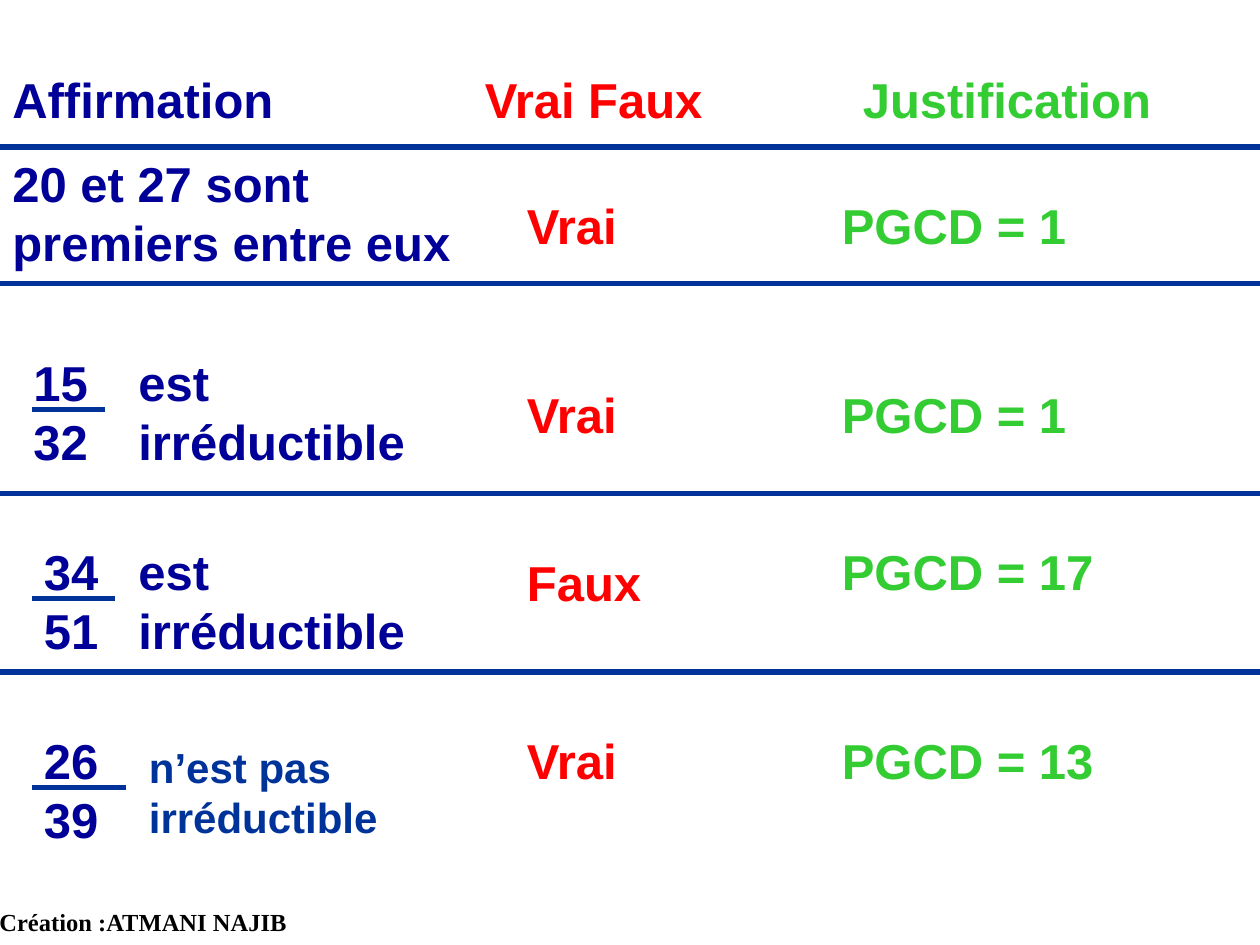
from lxml import etree
from pptx import Presentation
from pptx.dml.color import RGBColor
from pptx.enum.shapes import MSO_CONNECTOR
from pptx.enum.text import MSO_AUTO_SIZE, PP_ALIGN
from pptx.oxml.ns import qn
from pptx.util import Inches, Pt

LINE = MSO_CONNECTOR.STRAIGHT
FIT = MSO_AUTO_SIZE.SHAPE_TO_FIT_TEXT
LEFT, RIGHT = PP_ALIGN.LEFT, PP_ALIGN.RIGHT
COLS, ROWS = 120, 90
NAVY, BLUE, RED, GREEN = "000099", "003399", "FF0000", "33CC33"
ONE, TWO = 6.8, 12.4
MARK, PROOF = 49, 79


def unit(n):
    """Turn grid steps, twelve to the inch, into a length."""
    return Inches(n / 12)


def paint(code):
    """Return the colour for a hex string."""
    return RGBColor.from_string(code)


def text(host, words, box, color=NAVY, size=28, face="Arial",
         wrap=False, align=LEFT):
    """Place bold text, one paragraph per line, in a grid box."""
    frame = host.add_textbox(*map(unit, box)).text_frame
    frame.text = words
    frame.word_wrap = wrap
    frame.auto_size = FIT
    for para in frame.paragraphs:
        para.alignment = align
        font = para.runs[0].font
        font.name, font.size, font.bold = face, Pt(size), True
        font.color.rgb = paint(color)


def rule(host, start, end, y):
    """Draw a level blue line between two columns."""
    line = host.add_connector(LINE, unit(start), unit(y), unit(end), unit(y))
    line.line.color.rgb = paint(BLUE)
    line.line.width = Pt(3)
    etree.SubElement(line._element.spPr, qn("a:effectLst"))


def header(host, top):
    """Write the three column titles."""
    titles = [("Affirmation", 0, 27.4, NAVY), ("Vrai Faux", 45, 23.4, RED),
              ("Justification", 81, 30, GREEN)]
    for words, left, wide, color in titles:
        text(host, words, (left, top, wide, ONE), color=color)


def answer(host, top, mark, proof, drop=0):
    """Write the verdict, lowered by drop, and its proof."""
    wide = 11.3 if mark == "Vrai" else 13.3
    text(host, mark, (MARK, top + drop, wide, ONE), color=RED)
    wide = 23.8 if proof.endswith("= 1") else 26.4
    text(host, proof, (PROOF, top, wide, ONE), color=GREEN)


def claim(host, top, ratio, left, wide, end, words, box, **form):
    """Group a fraction, its bar and the words that follow."""
    group = host.add_group_shape().shapes
    text(group, ratio, (left, top, wide, TWO), wrap=True)
    x, drop, span, high = box
    text(group, words, (x, top + drop, span, high), wrap=True, **form)
    rule(group, 3, end, top + 6)


def build():
    """Build the slide and save it."""
    deck = Presentation()
    deck.slide_width, deck.slide_height = unit(COLS), unit(ROWS)
    host = deck.slides.add_slide(deck.slide_layouts[6]).shapes
    header(host, 6)
    for y in (14, 27, 47, 64):
        rule(host, COLS, 0, y)
    text(host, "20 et 27 sont premiers entre eux", (0, 14, 46, TWO), wrap=True)
    answer(host, 18, "Vrai", "PGCD = 1")
    answer(host, 36, "Vrai", "PGCD = 1")
    answer(host, 51, "Faux", "PGCD = 17", drop=1)
    answer(host, 69, "Vrai", "PGCD = 13")
    same = "est irréductible"
    claim(host, 33, "15\n32", 2, 12, 10, same, (12, 0, 33, TWO))
    claim(host, 51, "34\n51", 3, 10, 11, same, (12, 0, 29, TWO))
    claim(host, 69, "26\n39", 3, 9, 12, "n’est pas irréductible",
          (13, 1, 27, 10.8), color=BLUE, size=24)
    text(host, "Création :ATMANI NAJIB", (-1.9, 85.8, 30.4, 4.1),
         color="000000", size=14, face="Times New Roman", wrap=True,
         align=RIGHT)
    deck.save("out.pptx")


if __name__ == "__main__":
    build()
